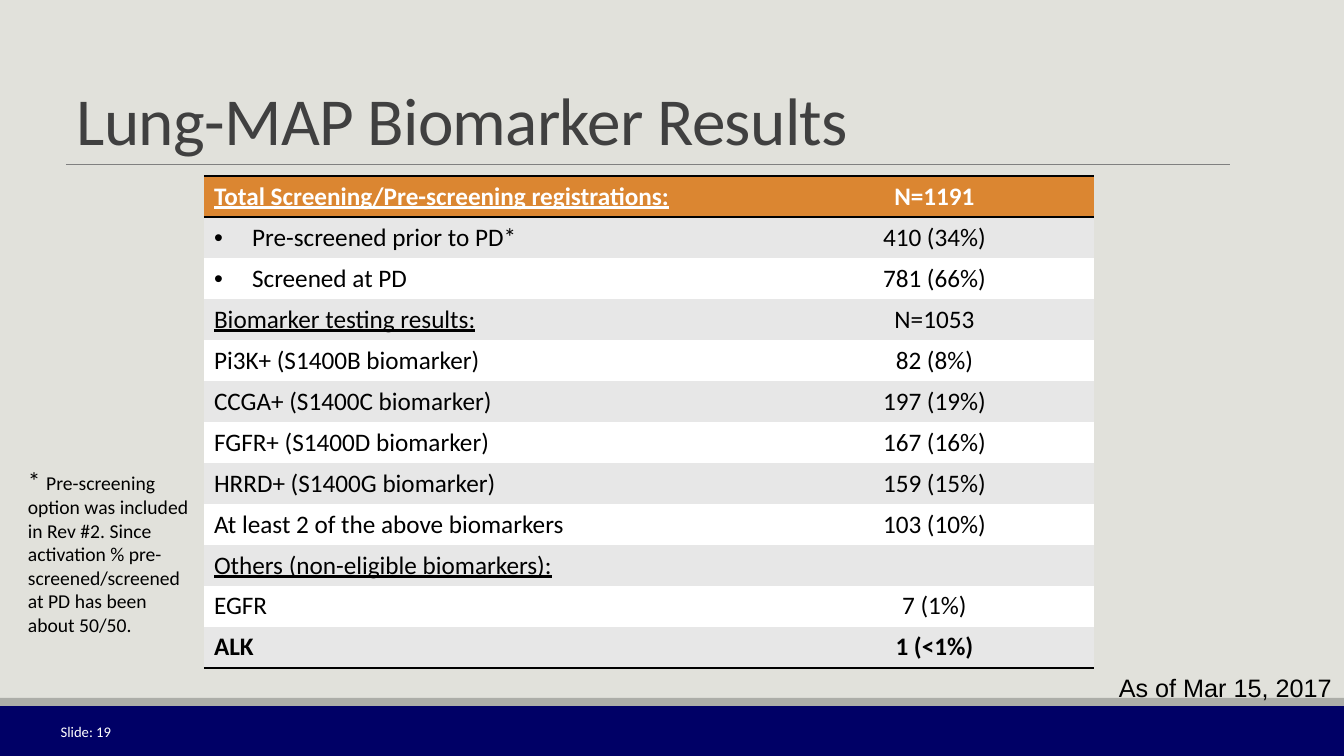
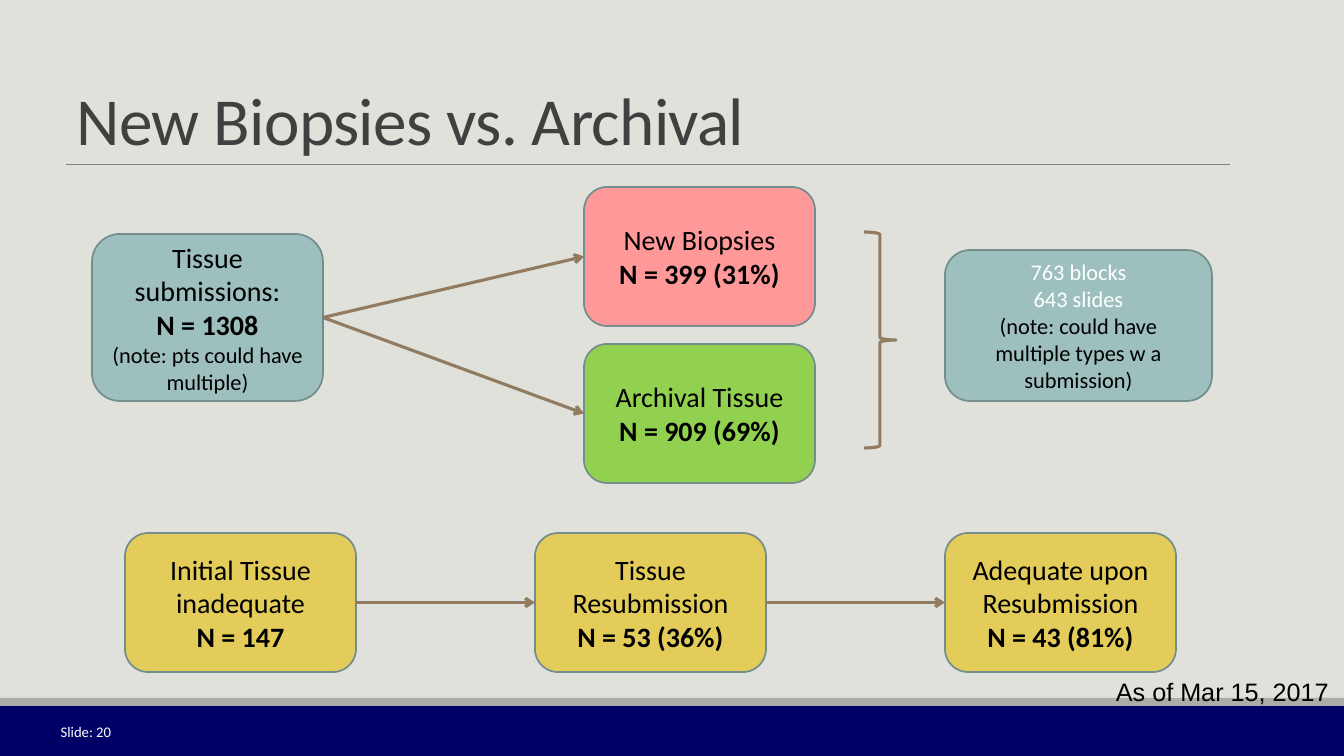
from dataclasses import dataclass

from lxml import etree
from pptx import Presentation
from pptx.dml.color import RGBColor
from pptx.enum.shapes import MSO_CONNECTOR, MSO_SHAPE
from pptx.enum.text import MSO_ANCHOR, PP_ALIGN
from pptx.oxml.ns import qn
from pptx.util import Emu, Pt

SLIDE_WIDTH, SLIDE_HEIGHT = 1344, 756
EMU_PER_PX = 12192000 / SLIDE_WIDTH

STRAIGHT = MSO_CONNECTOR.STRAIGHT
RECTANGLE = MSO_SHAPE.RECTANGLE
ROUNDED = MSO_SHAPE.ROUNDED_RECTANGLE
RIGHT_BRACE = MSO_SHAPE.RIGHT_BRACE
TOP, MIDDLE, BOTTOM = MSO_ANCHOR.TOP, MSO_ANCHOR.MIDDLE, MSO_ANCHOR.BOTTOM
LEFT, CENTER, RIGHT = PP_ALIGN.LEFT, PP_ALIGN.CENTER, PP_ALIGN.RIGHT
LEFT_SIDE, RIGHT_SIDE = 1, 3

BODY_FONT = "Calibri"
DATE_FONT = "Arial"
NO_GRID_STYLE = "{2D5ABB26-0587-4C30-8999-92F81FD0307C}"

COLORS = {
    "page": "E1E1DB",
    "footer": "000066",
    "footer_edge": "ACADA8",
    "rule": "808080",
    "title": "404040",
    "black": "000000",
    "white": "FFFFFF",
    "header": "DB8631",
    "stripe": "E7E7E7",
    "teal": "9DBFBE",
    "pink": "FF9999",
    "green": "92D050",
    "yellow": "E3CC5A",
    "outline": "748D8D",
    "arrow": "927C61",
}


@dataclass(frozen=True)
class Area:
    left: int
    top: int
    width: int
    height: int

    def emu(self) -> tuple:
        return px(self.left), px(self.top), px(self.width), px(self.height)


@dataclass(frozen=True)
class Line:
    text: str
    size: float = 20
    bold: bool = False
    underline: bool = False
    color: str = "black"
    align: PP_ALIGN = LEFT
    font: str = BODY_FONT


@dataclass(frozen=True)
class Node:
    area: Area
    color: str
    lines: tuple


@dataclass(frozen=True)
class Row:
    label: str
    value: str
    heading: bool = False
    bullet: bool = False
    bold: bool = False


TITLE_AREA = Area(67, 4, 1162, 160)
NUMBER_AREA = Area(11, 712, 110, 40)
FOOTER_BANDS = (
    (Area(0, 706, SLIDE_WIDTH, 50), "footer"),
    (Area(0, 698, SLIDE_WIDTH, 8), "footer_edge"),
)

# Biomarker table
TABLE_LEFT, TABLE_TOP, ROW_HEIGHT = 204, 176, 41
COLUMN_WIDTHS = (571, 319)
RESULTS = (
    Row("Total Screening/Pre-screening registrations:", "N=1191", heading=True, bold=True),
    Row("Pre-screened prior to PD*", "410 (34%)", bullet=True),
    Row("Screened at PD", "781 (66%)", bullet=True),
    Row("Biomarker testing results:", "N=1053", heading=True),
    Row("Pi3K+ (S1400B biomarker)", "82 (8%)"),
    Row("CCGA+ (S1400C biomarker)", "197 (19%)"),
    Row("FGFR+ (S1400D biomarker)", "167 (16%)"),
    Row("HRRD+ (S1400G biomarker)", "159 (15%)"),
    Row("At least 2 of the above biomarkers", "103 (10%)"),
    Row("Others (non-eligible biomarkers):", "", heading=True),
    Row("EGFR", "7 (1%)"),
    Row("ALK", "1 (<1%)", bold=True),
)
FOOTNOTE = (
    "Pre-screening option was included in Rev #2. Since activation % "
    "pre-screened/screened at PD has been about 50/50."
)

# Flow of tissue
NODE_WIDTH, NODE_HEIGHT = 231, 139
RETRY_LEFT, RETRY_STEP, RETRY_TOP = 125, 410, 533


def count_lines(label: str, count: str) -> tuple:
    return (Line(label, align=CENTER), Line(count, bold=True, align=CENTER))


SUBMISSIONS = Node(
    Area(92, 234, NODE_WIDTH, 167),
    "teal",
    count_lines("Tissue submissions:", "N = 1308")
    + (Line("(note: pts could have multiple)", 16, align=CENTER),),
)
SOURCES = (
    Node(Area(584, 187, NODE_WIDTH, NODE_HEIGHT), "pink",
         count_lines("New Biopsies", "N = 399 (31%)")),
    Node(Area(584, 344, NODE_WIDTH, NODE_HEIGHT), "green",
         count_lines("Archival Tissue", "N = 909 (69%)")),
)
MATERIAL = Node(
    Area(945, 250, 267, 151),
    "teal",
    (
        Line("763 blocks", 16, color="white", align=CENTER),
        Line("643 slides", 16, color="white", align=CENTER),
        Line("(note: could have multiple types w a submission)", 16, align=CENTER),
    ),
)
RETRIES = (
    ("Initial Tissue inadequate", "N = 147"),
    ("Tissue Resubmission", "N = 53 (36%)"),
    ("Adequate upon Resubmission", "N = 43 (81%)"),
)


def px(length: int) -> Emu:
    return Emu(round(length * EMU_PER_PX))


def rgb(name: str) -> RGBColor:
    return RGBColor.from_string(COLORS[name])


def write_line(para, line: Line):
    """Fill one paragraph and return its only run."""
    para.alignment = line.align
    para.font.name = line.font
    para.font.size = Pt(line.size)
    para.font.bold = line.bold
    para.font.underline = line.underline
    para.font.color.rgb = rgb(line.color)
    span = para.add_run()
    span.text = line.text
    return span


def write_lines(frame, lines: tuple, anchor: MSO_ANCHOR) -> None:
    frame.word_wrap = True
    frame.vertical_anchor = anchor
    for index, line in enumerate(lines):
        para = frame.add_paragraph() if index else frame.paragraphs[0]
        write_line(para, line)


def add_text(page, area: Area, line: Line, anchor: MSO_ANCHOR = TOP):
    box = page.shapes.add_textbox(*area.emu())
    write_lines(box.text_frame, (line,), anchor)
    return box.text_frame.paragraphs[0]


def add_line(page, start: tuple, end: tuple, color: str, width: float):
    line = page.shapes.add_connector(STRAIGHT, *(px(value) for value in start + end))
    line.line.color.rgb = rgb(color)
    line.line.width = Pt(width)
    etree.SubElement(line._element.spPr, qn("a:effectLst"))
    return line


def add_arrow(page, source, target) -> None:
    arrow = add_line(page, (0, 0), (1, 1), "arrow", 2.25)
    arrow.begin_connect(source, RIGHT_SIDE)
    arrow.end_connect(target, LEFT_SIDE)
    etree.SubElement(arrow.line._get_or_add_ln(), qn("a:tailEnd"), type="arrow")


def add_node(page, node: Node):
    box = page.shapes.add_shape(ROUNDED, *node.area.emu())
    box.shadow.inherit = False
    box.fill.solid()
    box.fill.fore_color.rgb = rgb(node.color)
    box.line.color.rgb = rgb("outline")
    box.line.width = Pt(1.25)
    write_lines(box.text_frame, node.lines, MIDDLE)
    return box


def add_page(deck, title: str, number: int, date_area: Area):
    """Start a slide with the shared title, rule, footer and date."""
    page = deck.slides.add_slide(deck.slide_layouts[6])
    page.background.fill.solid()
    page.background.fill.fore_color.rgb = rgb("page")
    for area, color in FOOTER_BANDS:
        band = page.shapes.add_shape(RECTANGLE, *area.emu())
        band.shadow.inherit = False
        band.fill.solid()
        band.fill.fore_color.rgb = rgb(color)
        band.line.fill.background()
    add_line(page, (66, 164), (1230, 164), "rule", 0.5)
    para = add_text(page, TITLE_AREA, Line(title, 48, color="title"), BOTTOM)
    para.line_spacing = 0.85
    para.runs[0]._r.get_or_add_rPr().set("spc", "-50")
    add_text(page, NUMBER_AREA,
             Line(f"Slide: {number}", 10.5, color="white", align=RIGHT), MIDDLE)
    add_text(page, date_area, Line("As of Mar 15, 2017", 18, font=DATE_FONT))
    return page


def add_bullet(para) -> None:
    properties = para._p.get_or_add_pPr()
    properties.set("marL", str(px(38)))
    properties.set("indent", str(-px(38)))
    etree.SubElement(properties, qn("a:buFont"), typeface="Arial")
    etree.SubElement(properties, qn("a:buChar"), char="•")


def add_borders(cell, sides: tuple) -> None:
    properties = cell._tc.get_or_add_tcPr()
    for index, side in enumerate(sides):
        border = etree.Element(qn(f"a:{side}"), w=str(Pt(2)))
        fill = etree.SubElement(border, qn("a:solidFill"))
        etree.SubElement(fill, qn("a:srgbClr"), val=COLORS["black"])
        properties.insert(index, border)


def add_results_table(page) -> None:
    area = Area(TABLE_LEFT, TABLE_TOP, sum(COLUMN_WIDTHS), ROW_HEIGHT * len(RESULTS))
    table = page.shapes.add_table(len(RESULTS), len(COLUMN_WIDTHS), *area.emu()).table
    table.horz_banding = False
    table._tbl.tblPr.find(qn("a:tableStyleId")).text = NO_GRID_STYLE
    for column, width in zip(table.columns, COLUMN_WIDTHS):
        column.width = px(width)
    last = len(RESULTS) - 1
    borders = {0: ("lnT", "lnB"), last: ("lnB",)}
    for index, row in enumerate(RESULTS):
        table.rows[index].height = px(ROW_HEIGHT)
        fill = "header" if index == 0 else "stripe" if index % 2 else "white"
        color = "white" if index == 0 else "black"
        lines = (
            Line(row.label, 18, row.bold, row.heading, color),
            Line(row.value, 18, row.bold, False, color, CENTER),
        )
        for column, line in enumerate(lines):
            cell = table.cell(index, column)
            cell.fill.solid()
            cell.fill.fore_color.rgb = rgb(fill)
            para = cell.text_frame.paragraphs[0]
            if row.bullet and column == 0:
                add_bullet(para)
            if line.text:
                write_line(para, line)
            add_borders(cell, borders.get(index, ()))


def build_results(deck) -> None:
    page = add_page(deck, "Lung-MAP Biomarker Results", 19, Area(1109, 667, 235, 40))
    add_results_table(page)
    para = add_text(page, Area(18, 460, 185, 183), Line("* ", 18))
    note = para.add_run()
    note.text = FOOTNOTE
    note.font.size = Pt(14)


def build_biopsies(deck) -> None:
    page = add_page(deck, "New Biopsies vs. Archival", 20, Area(1106, 671, 238, 40))
    # Submissions split by source
    submissions = add_node(page, SUBMISSIONS)
    for source in SOURCES:
        add_arrow(page, submissions, add_node(page, source))
    brace = page.shapes.add_shape(RIGHT_BRACE, *Area(864, 232, 32, 216).emu())
    brace.shadow.inherit = False
    brace.fill.background()
    brace.line.color.rgb = rgb("arrow")
    brace.line.width = Pt(2.25)
    add_node(page, MATERIAL)
    # Resubmission chain
    previous = None
    for index, (label, count) in enumerate(RETRIES):
        area = Area(RETRY_LEFT + index * RETRY_STEP, RETRY_TOP, NODE_WIDTH, NODE_HEIGHT)
        box = add_node(page, Node(area, "yellow", count_lines(label, count)))
        if previous is not None:
            add_arrow(page, previous, box)
        previous = box


def main() -> None:
    deck = Presentation()
    deck.slide_width, deck.slide_height = px(SLIDE_WIDTH), px(SLIDE_HEIGHT)
    build_results(deck)
    build_biopsies(deck)
    deck.save("out.pptx")


if __name__ == "__main__":
    main()
